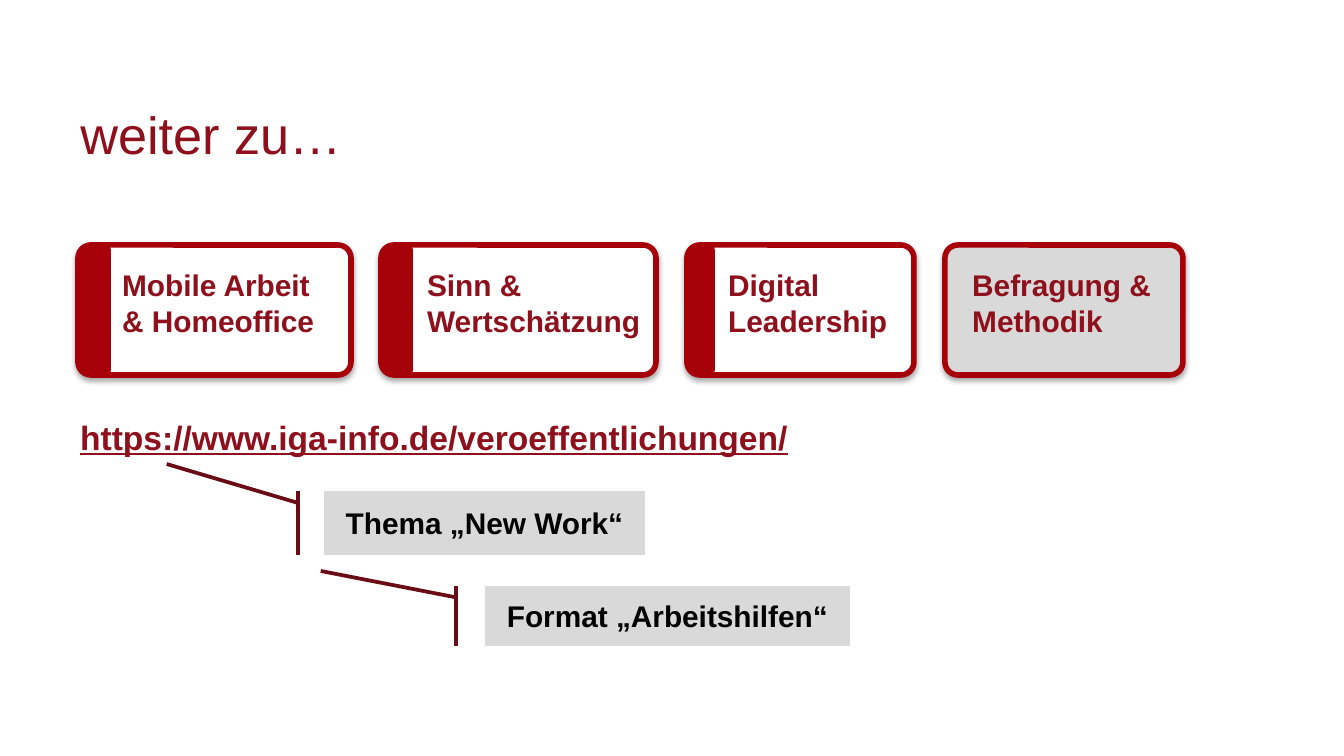
from lxml import etree
from pptx import Presentation
from pptx.dml.color import RGBColor
from pptx.enum.shapes import MSO_SHAPE
from pptx.enum.text import MSO_ANCHOR, PP_ALIGN
from pptx.oxml import parse_xml
from pptx.util import Pt

ROUNDED = MSO_SHAPE.ROUNDED_RECTANGLE
CALLOUT = MSO_SHAPE.LINE_CALLOUT_1_ACCENT_BAR
TOP, MIDDLE = MSO_ANCHOR.TOP, MSO_ANCHOR.MIDDLE
LEFT, CENTER = PP_ALIGN.LEFT, PP_ALIGN.CENTER

COLORS = {"wine": "8E101C", "red": "A60009", "dark": "690C15",
          "grey": "D9D9D9", "white": "FFFFFF", "black": "000000"}
FONT = "Arial"
PX = 914400 / 134.4

TITLE = "weiter zu…"
LINK = "https://www.iga-info.de/veroeffentlichungen/"
CARD_TOP, CARD_HEIGHT, LABEL_TOP, LABEL_HEIGHT = 245, 130, 260, 86
CARD_RADIUS, BAR_RADIUS = 13, 5
CARDS = [
    {"label": "Digital Leadership", "card": (687, 227), "text": (715, 190),
     "bar": (688, 27), "fill": "white"},
    {"label": "Sinn & Wertschätzung", "card": (381, 275), "text": (414, 242),
     "bar": (383, 30), "fill": "white"},
    {"label": "Mobile Arbeit & Homeoffice", "card": (78, 273), "text": (109, 227),
     "bar": (80, 31), "fill": "white"},
    {"label": "Befragung & Methodik", "card": (945, 238), "text": (959, 213),
     "bar": None, "fill": "grey"},
]
CALLOUTS = [
    ("Thema „New Work“", (324, 491, 321, 64), (0.19, -0.08, -0.42, -0.49)),
    ("Format „Arbeitshilfen“", (485, 586, 365, 60), (0.19, -0.08, -0.25, -0.45)),
]


def emu(*lengths):
    return [round(length * PX) for length in lengths]


def rgb(name):
    return RGBColor.from_string(COLORS[name])


def write(holder, words, size, color, bold=True, underline=None,
          align=LEFT, anchor=TOP):
    frame = holder.text_frame
    frame.word_wrap = True
    frame.vertical_anchor = anchor
    paragraph = frame.paragraphs[0]
    paragraph.alignment = align
    run = paragraph.add_run()
    run.text = words
    font = run.font
    font.name, font.size, font.bold, font.underline = FONT, Pt(size), bold, underline
    font.color.rgb = rgb(color)
    return paragraph


def add_box(slide, preset, place, fill, line=None, width=0):
    box = slide.shapes.add_shape(preset, *emu(*place))
    box.shadow.inherit = False
    box.fill.solid()
    box.fill.fore_color.rgb = rgb(fill)
    if line:
        box.line.color.rgb = rgb(line)
        box.line.width = Pt(width)
    else:
        box.line.fill.background()
    return box


def add_rounded(slide, place, radius, fill, line=None, width=0):
    box = add_box(slide, ROUNDED, place, fill, line, width)
    box.adjustments[0] = radius / min(place[2:])
    return box


def add_text(slide, place, words, size, **style):
    write(slide.shapes.add_textbox(*emu(*place)), words, size, "wine", **style)


def drop_shadow(box):
    effects = box._element.spPr.find(
        "{http://schemas.openxmlformats.org/drawingml/2006/main}effectLst")
    effects.append(parse_xml(
        '<a:outerShdw xmlns:a="http://schemas.openxmlformats.org/drawingml/2006/main" '
        f'blurRad="{Pt(3.1)}" dist="{Pt(1.8)}" dir="5400000" rotWithShape="0">'
        f'<a:srgbClr val="{COLORS["black"]}"><a:alpha val="35000"/></a:srgbClr>'
        '</a:outerShdw>'))


def add_card(slide, card):
    left, width = card["card"]
    frame = add_rounded(slide, (left, CARD_TOP, width, CARD_HEIGHT),
                        CARD_RADIUS, card["fill"], "red", 3)
    drop_shadow(frame)
    left, width = card["text"]
    add_text(slide, (left, LABEL_TOP, width, LABEL_HEIGHT), card["label"], 16)
    if card["bar"]:
        left, width = card["bar"]
        add_rounded(slide, (left, CARD_TOP, width, CARD_HEIGHT), BAR_RADIUS, "red")


def main():
    deck = Presentation()
    deck.slide_width, deck.slide_height = emu(1344, 756)
    slide = deck.slides.add_slide(deck.slide_layouts[5])

    title = slide.shapes.title
    title.left, title.top, title.width, title.height = emu(67, 90, 898, 95)
    write(title, TITLE, 28, "wine", bold=False, anchor=MIDDLE).line_spacing = 0.9

    add_text(slide, (67, 410, 1126, 54), LINK, 18, underline=True)

    for words, place, pointer in CALLOUTS:
        callout = add_box(slide, CALLOUT, place, "grey", "dark", 2)
        for index, value in enumerate(pointer):
            callout.adjustments[index] = value
        write(callout, words, 16, "black", align=CENTER, anchor=MIDDLE)

    for card in CARDS:
        add_card(slide, card)

    deck.save("out.pptx")


if __name__ == "__main__":
    main()
